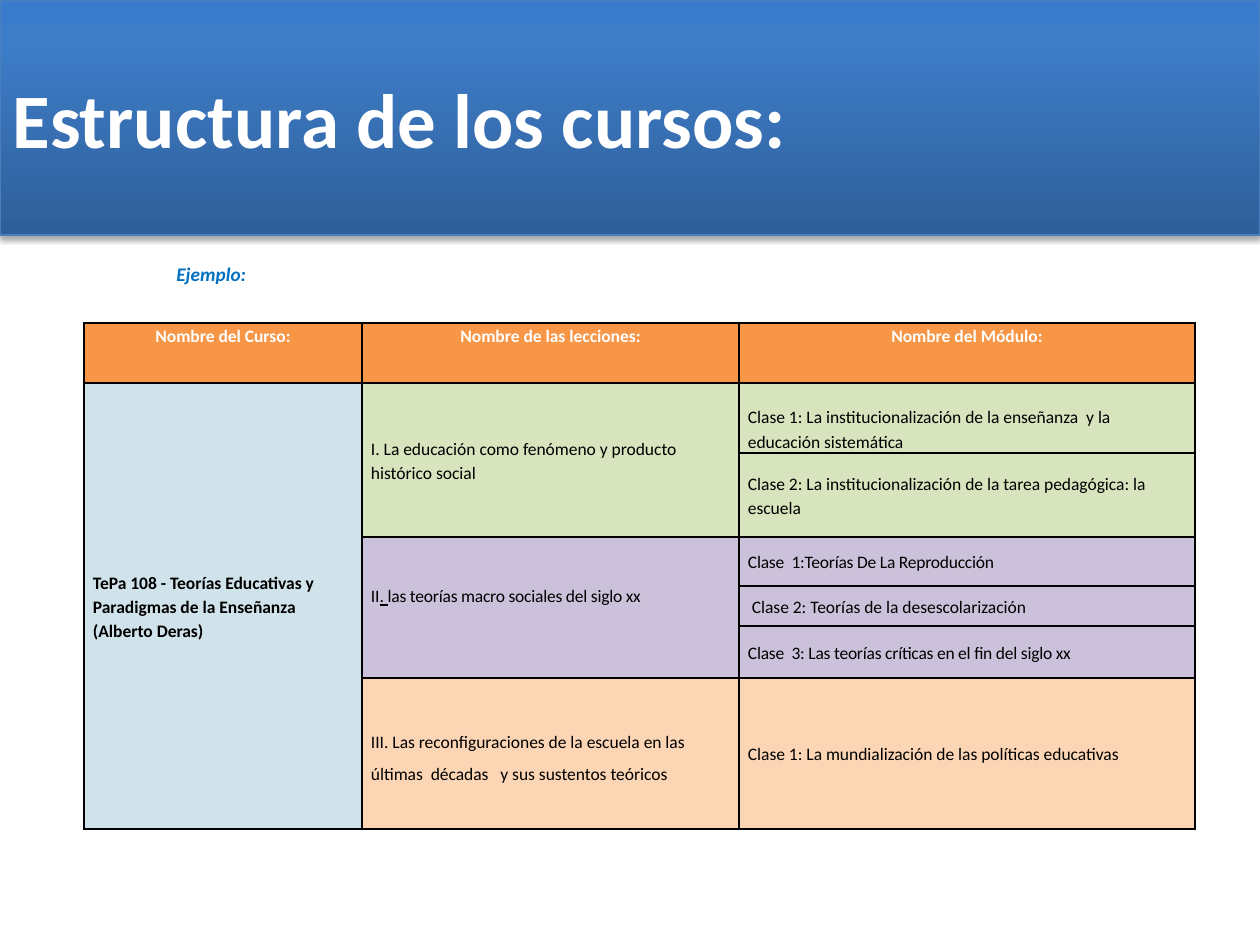
from dataclasses import dataclass

from pptx import Presentation
from pptx import util as u
from pptx.dml.color import RGBColor
from pptx.enum import text
from pptx.oxml import parse_xml
from pptx.oxml.ns import nsdecls, qn

EMU_PER_PX = u.Inches(1) / 126


def px(length):
    return u.Emu(round(length * EMU_PER_PX))


@dataclass(frozen=True)
class Theme:
    font: str = "Calibri"
    title_size: int = 44
    label_size: int = 11
    table_size: int = 10
    white: str = "FFFFFF"
    black: str = "000000"
    label: str = "0070C0"
    banner_line: str = "4B7EBC"
    banner_stops: tuple = ((0, "2F5F99"), (80, "3D7CC7"), (100, "3A7CCB"))
    header: str = "F79646"
    course: str = "D0E3EA"
    lesson_1: str = "D7E4BD"
    lesson_2: str = "CCC1DA"
    lesson_3: str = "FCD5B5"


class SlideBuilder:
    def __init__(self, presentation, theme):
        self.theme = theme
        self.slide = presentation.slides.add_slide(presentation.slide_layouts[5])

    def add_run(self, paragraph, words, size, color, bold=False, italic=False,
                underline=False, tracking=0):
        run = paragraph.add_run()
        run.text = words
        font = run.font
        font.name, font.size = self.theme.font, u.Pt(size)
        font.bold, font.italic, font.underline = bold, italic, underline
        font.color.rgb = RGBColor.from_string(color)
        if tracking:
            run._r.get_or_add_rPr().set("spc", str(tracking))

    def banner(self, words, left, top, width, height):
        shape = self.slide.shapes.title
        shape.left, shape.top, shape.width, shape.height = map(
            px, (left, top, width, height))
        shape.fill.gradient()
        shape.fill.gradient_angle = 90
        properties = shape._element.spPr
        stops = properties.find(".//" + qn("a:gsLst"))
        stops.clear()
        for position, color in self.theme.banner_stops:
            stops.append(parse_xml(
                f'<a:gs {nsdecls("a")} pos="{position * 1000}">'
                f'<a:srgbClr val="{color}"/></a:gs>'))
        shape.line.color.rgb = RGBColor.from_string(self.theme.banner_line)
        shape.line.width = u.Pt(0.75)
        shape.shadow.inherit = False
        properties.find(qn("a:effectLst")).append(parse_xml(
            f'<a:outerShdw {nsdecls("a")} blurRad="{u.Pt(3.1)}" dist="{u.Pt(1.8)}" '
            f'dir="5400000" rotWithShape="0"><a:srgbClr val="{self.theme.black}">'
            '<a:alpha val="35000"/></a:srgbClr></a:outerShdw>'))
        frame = shape.text_frame
        frame.vertical_anchor = text.MSO_ANCHOR.MIDDLE
        paragraph = frame.paragraphs[0]
        paragraph.alignment = text.PP_ALIGN.LEFT
        self.add_run(paragraph, words, self.theme.title_size, self.theme.white, bold=True)

    def label(self, words, left, top, width, height):
        box = self.slide.shapes.add_textbox(*map(px, (left, top, width, height)))
        frame = box.text_frame
        frame.word_wrap = True
        frame.auto_size = text.MSO_AUTO_SIZE.SHAPE_TO_FIT_TEXT
        frame.vertical_anchor = text.MSO_ANCHOR.MIDDLE
        self.add_run(frame.paragraphs[0], words, self.theme.label_size,
                     self.theme.label, bold=True, italic=True)

    def table(self, left, top, columns, rows):
        frame = self.slide.shapes.add_table(
            len(rows), len(columns), px(left), px(top), px(sum(columns)), px(sum(rows)))
        table = frame.table
        table.first_row = table.horz_banding = False
        for column, width in zip(table.columns, columns):
            column.width = px(width)
        for row, height in zip(table.rows, rows):
            row.height = px(height)
        for cell in table.iter_cells():
            self.borders(cell)
        return table

    def borders(self, cell):
        properties = cell._tc.get_or_add_tcPr()
        for index, side in enumerate("LRTB"):
            properties.insert(index, parse_xml(
                f'<a:ln{side} {nsdecls("a")} w="{u.Pt(1)}"><a:solidFill>'
                f'<a:srgbClr val="{self.theme.black}"/></a:solidFill></a:ln{side}>'))

    def cell(self, table, row, column, runs, fill, span=1, color=None, bold=False,
             anchor=text.MSO_ANCHOR.MIDDLE, align=text.PP_ALIGN.LEFT,
             spacing=1.15, bottom=0):
        cell = table.cell(row, column)
        if span > 1:
            cell.merge(table.cell(row + span - 1, column))
        for covered in range(row, row + span):
            part = table.cell(covered, column)
            part.fill.solid()
            part.fill.fore_color.rgb = RGBColor.from_string(fill)
        cell.margin_left = cell.margin_right = px(9)
        cell.margin_top, cell.margin_bottom = 0, px(bottom)
        cell.vertical_anchor = anchor
        paragraph = cell.text_frame.paragraphs[0]
        paragraph.alignment, paragraph.line_spacing = align, spacing
        for words, style in runs:
            self.add_run(paragraph, words, self.theme.table_size,
                         color or self.theme.black, bold=bold, **style)


def main():
    presentation = Presentation()
    presentation.slide_width, presentation.slide_height = px(1260), px(945)
    theme = Theme()
    builder = SlideBuilder(presentation, theme)

    # Title banner and label
    builder.banner("Estructura de los cursos:", 0, 0, 1260, 235)
    builder.label("Ejemplo:", 164, 255, 125, 37)

    # Table grid and header
    table = builder.table(84, 323, [278, 377, 456], [60, 70, 84, 49, 40, 52, 151])
    headers = ["Nombre del Curso:", "Nombre de las lecciones:", "Nombre del Módulo:"]
    for column, words in enumerate(headers):
        builder.cell(table, 0, column, [(words, {})], theme.header, color=theme.white,
                     bold=True, anchor=text.MSO_ANCHOR.TOP, align=text.PP_ALIGN.CENTER)

    # Course
    course = "TePa 108 - Teorías Educativas y Paradigmas de la Enseñanza (Alberto Deras)"
    builder.cell(table, 1, 0, [(course, {})], theme.course, span=6, bold=True)

    # Lessons, each with its modules: runs, cell options, fill, modules
    tight = {"tracking": -10}
    lessons = [
        ([("I. La educación como fenómeno y producto histórico social", {})], {},
         theme.lesson_1, [
             ("Clase 1: La institucionalización de la enseñanza  y la educación sistemática",
              {}, {"anchor": text.MSO_ANCHOR.BOTTOM}),
             ("Clase 2: La institucionalización de la tarea pedagógica: la escuela", {}, {}),
         ]),
        ([("II", tight), (". ", {"underline": True, **tight}),
          ("las teorías macro sociales del siglo xx", tight)], {"bottom": 24},
         theme.lesson_2, [
             ("Clase  1:Teorías De La Reproducción", tight, {}),
             (" Clase 2: Teorías de la desescolarización", {}, {}),
             ("Clase  3: Las teorías críticas en el fin del siglo xx", tight, {}),
         ]),
        ([("III. Las reconfiguraciones de la escuela en las últimas  décadas   "
           "y sus sustentos teóricos", {})], {"spacing": 1.5},
         theme.lesson_3, [
             ("Clase 1: La mundialización de las políticas educativas", {}, {}),
         ]),
    ]
    row = 1
    for runs, options, fill, modules in lessons:
        builder.cell(table, row, 1, runs, fill, span=len(modules), **options)
        for words, style, module_options in modules:
            builder.cell(table, row, 2, [(words, style)], fill, **module_options)
            row += 1

    presentation.save("out.pptx")


if __name__ == "__main__":
    main()
